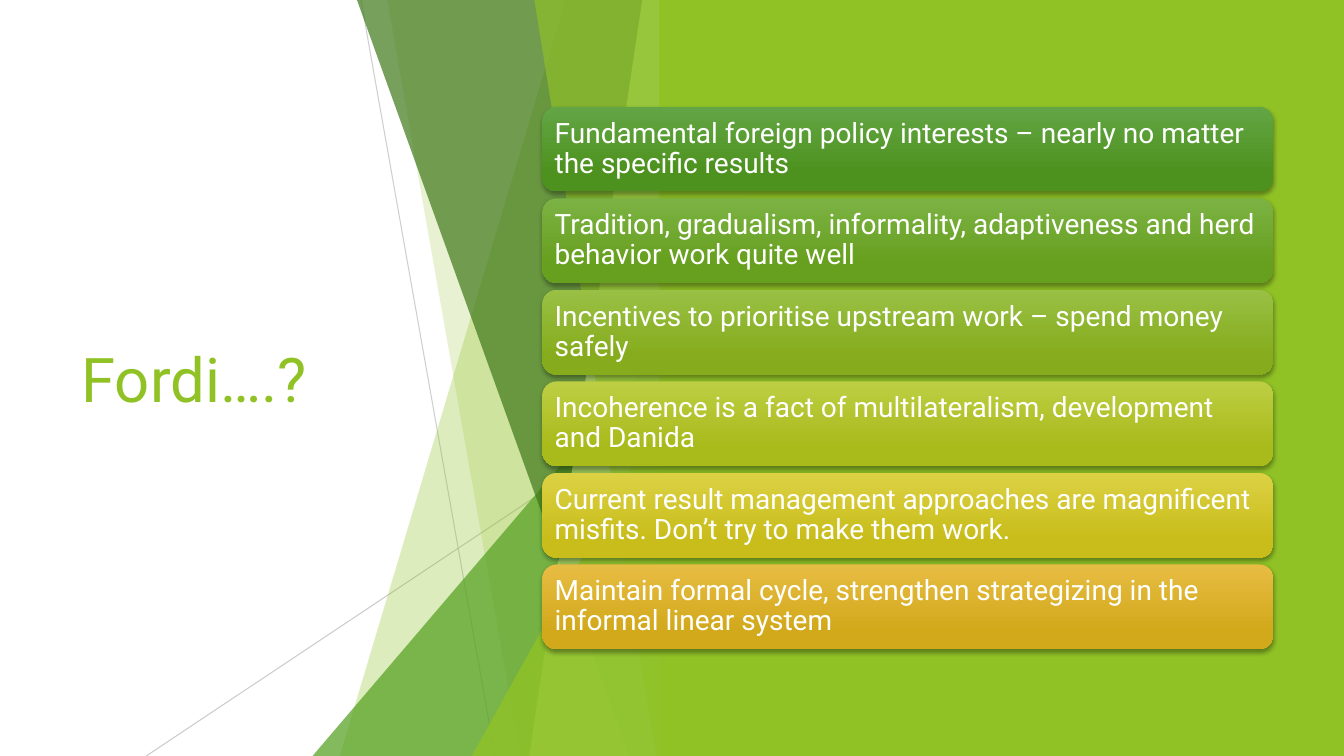
from lxml import etree
from pptx import Presentation
from pptx.dml.color import RGBColor
from pptx.enum.shapes import MSO_CONNECTOR, MSO_SHAPE
from pptx.enum.text import MSO_ANCHOR, PP_ALIGN
from pptx.oxml.ns import qn
from pptx.util import Inches, Pt

STRAIGHT = MSO_CONNECTOR.STRAIGHT
RECT = MSO_SHAPE.RECTANGLE
ROUND_RECT = MSO_SHAPE.ROUNDED_RECTANGLE
TRIANGLE = MSO_SHAPE.ISOSCELES_TRIANGLE
MIDDLE = MSO_ANCHOR.MIDDLE
LEFT = PP_ALIGN.LEFT

FONT = "Roboto"
COLORS = {
    "white": "FFFFFF",
    "black": "000000",
    "lime": "90C226",
    "green": "54A021",
    "forest": "3F7819",
    "pale": "C0E474",
    "grey": "BFBFBF",
}


def paint(fill, color, opacity=100):
    """Fill solidly with a named colour at an opacity in percent."""
    fill.solid()
    fill.fore_color.rgb = RGBColor.from_string(COLORS[color])
    if opacity < 100:
        clr = fill._xPr.find(".//" + qn("a:srgbClr"))
        etree.SubElement(clr, qn("a:alpha"), val=str(opacity * 1000))


def write(sp, text, size, color):
    tf = sp.text_frame
    tf.word_wrap = True
    tf.vertical_anchor = MIDDLE
    tf.text = text
    p = tf.paragraphs[0]
    p.alignment = LEFT
    font = p.runs[0].font
    font.name = FONT
    font.size = Pt(size)
    font.color.rgb = RGBColor.from_string(COLORS[color])
    return tf


prs = Presentation()
prs.slide_width = Inches(13.33)
prs.slide_height = Inches(7.5)
slide = prs.slides.add_slide(prs.slide_layouts[6])
shapes = slide.shapes
paint(slide.background.fill, "white")

# Title
title = shapes.add_textbox(Inches(0.71), Inches(1.51), Inches(3.88), Inches(4.48))
write(title, "Fordi….?", 44, "lime")

# Thin crossing lines: x1, y1, x2, y2, opacity
for x1, y1, x2, y2, opacity in [(3.58, 0, 4.91, 7.5, 75), (6.66, 4.03, 1.45, 7.5, 80)]:
    line = shapes.add_connector(STRAIGHT, Inches(x1), Inches(y1), Inches(x2), Inches(y2))
    line.line.width = Pt(0.75)
    paint(line.line.fill, "grey", opacity)
    etree.SubElement(line._element.spPr, qn("a:effectLst"))

# Facets, back to front: a band has its left edge's top and bottom x,
# a triangle has its left and top; all of them end at the same right edge
FACET_RIGHT = 6.66
BOTTOM = 7.5
facets = [
    ("band", 5.61, 3.37, "lime", 30),
    ("band", 3.84, 5.16, "lime", 20),
    ("triangle", 3.1, 3.33, "green", 72),
    ("band", 3.54, 6.24, "forest", 70),
    ("band", 6.37, 5.25, "pale", 70),
    ("band", 5.3, 6.51, "lime", 65),
    ("triangle", 4.68, 3.93, "lime", 80),
]
for kind, a, b, color, opacity in facets:
    if kind == "band":
        fb = shapes.build_freeform(Inches(a), 0)
        corners = [(FACET_RIGHT, 0), (FACET_RIGHT, BOTTOM), (b, BOTTOM)]
        fb.add_line_segments([(Inches(x), Inches(y)) for x, y in corners], close=True)
        sp = fb.convert_to_shape()
    else:
        sp = shapes.add_shape(TRIANGLE, Inches(a), Inches(b),
                              Inches(FACET_RIGHT - a), Inches(BOTTOM - b))
        sp.adjustments[0] = 1
    paint(sp.fill, color, opacity)
    sp.line.fill.background()
    sp.shadow.inherit = False

# Right panel
panel = shapes.add_shape(RECT, Inches(6.54), 0, Inches(6.79), Inches(BOTTOM))
paint(panel.fill, "lime")
panel.line.fill.background()
panel.shadow.inherit = False

# Cards: text, gradient top, gradient bottom
CARD_TOP, CARD_PITCH = 1.06, 0.908
cards = [
    ("Fundamental foreign policy interests – nearly no matter the specific results",
     "63A545", "4D921E"),
    ("Tradition, gradualism, informality, adaptiveness and herd behavior work quite well",
     "7BB244", "679F1E"),
    ("Incentives to prioritise upstream work – spend money safely",
     "99C044", "86AC1D"),
    ("Incoherence is a fact of multilateralism, development and Danida",
     "BDCE43", "A9BA1B"),
    ("Current result management approaches are magnificent misfits. "
     "Don’t try to make them work.",
     "DCD143", "C8BD1A"),
    ("Maintain formal cycle, strengthen strategizing in the informal linear system",
     "E7BC43", "D2A91B"),
]
for i, (text, light, dark) in enumerate(cards):
    card = shapes.add_shape(ROUND_RECT, Inches(5.38), Inches(CARD_TOP + i * CARD_PITCH),
                            Inches(7.25), Inches(0.84))
    card.fill.gradient()
    card.fill.gradient_angle = 270
    for stop, position, color in zip(card.fill.gradient_stops, (0, 0.78), (light, dark)):
        stop.position = position
        stop.color.rgb = RGBColor.from_string(color)
    card.line.fill.background()

    card.shadow.inherit = False
    effects = card._element.spPr.find(qn("a:effectLst"))
    shadow = etree.SubElement(effects, qn("a:outerShdw"), blurRad=str(Pt(3)),
                              dist=str(Pt(2)), dir="5400000", rotWithShape="0")
    clr = etree.SubElement(shadow, qn("a:srgbClr"), val=COLORS["black"])
    etree.SubElement(clr, qn("a:alpha"), val="35000")

    tf = write(card, text, 20, "white")
    tf.margin_left = tf.margin_right = Inches(0.08)
    tf.margin_top = tf.margin_bottom = Inches(0.08)
    tf.paragraphs[0].line_spacing = 0.9

prs.save("out.pptx")
